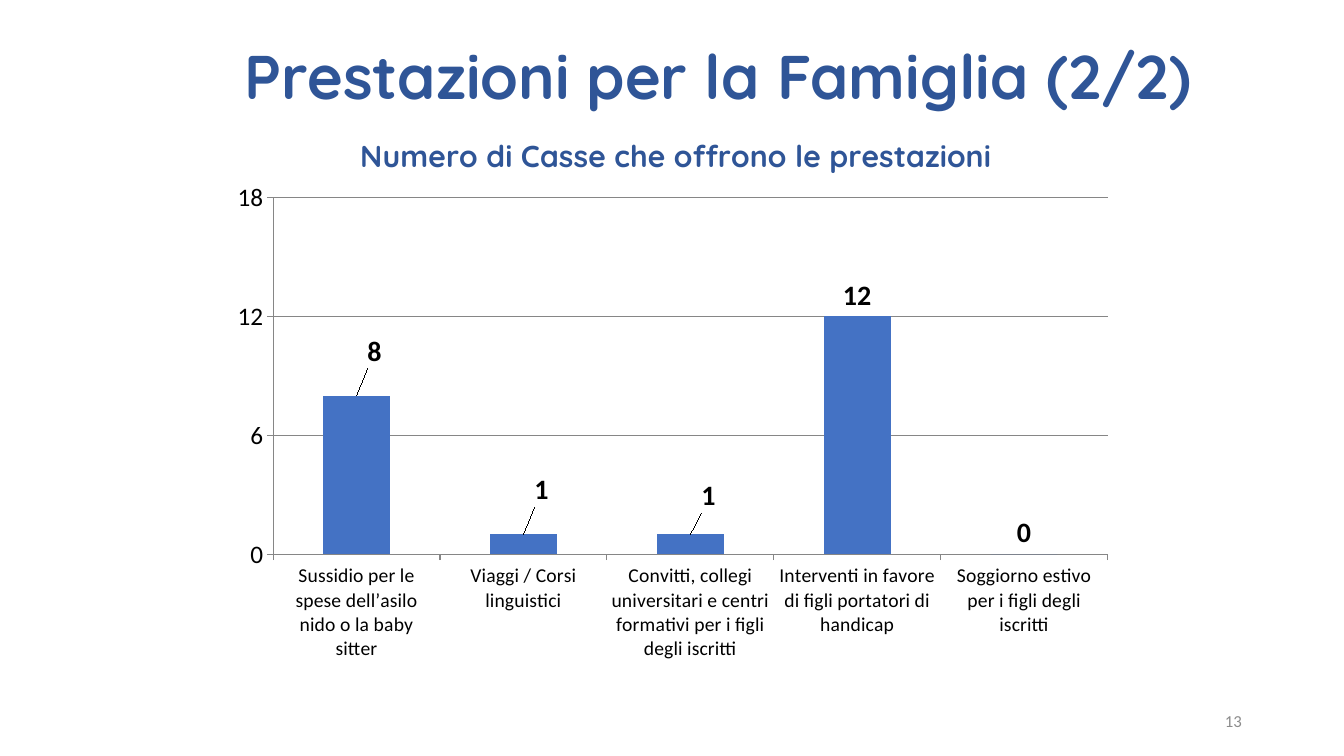
import pptx
import pptx.util
import pptx.dml.color
import pptx.chart.data
import pptx.enum.chart
import pptx.enum.text
import pptx.oxml
import pptx.oxml.ns

Cm, Pt = pptx.util.Cm, pptx.util.Pt
enum = pptx.enum.chart

theme = {
    "title": {"name": "Quicksand", "size": 44, "bold": True, "color": "2F5597"},
    "head": {"name": "Quicksand", "size": 21.6, "bold": True, "color": "2F5597"},
    "chart": {"name": "Calibri", "size": 18, "bold": False, "color": "000000"},
    "cats": {"name": "Calibri", "size": 14, "bold": False, "color": "000000"},
    "label": {"name": "Calibri", "size": 20, "bold": True, "color": "000000"},
    "page": {"name": "Calibri", "size": 12, "bold": False, "color": "8C8C8C"},
    "bar": "4472C4",
    "line": "868686",
}


def style(font, key):
    for name, value in theme[key].items():
        if name == "color":
            font.color.rgb = pptx.dml.color.RGBColor.from_string(value)
        else:
            setattr(font, name, Pt(value) if name == "size" else value)


def layout(**parts):
    body = "".join(f'<c:{tag} val="{val}"/>' for tag, val in parts.items())
    return pptx.oxml.parse_xml(
        f'<c:layout {pptx.oxml.ns.nsdecls("c")}><c:manualLayout>{body}'
        "</c:manualLayout></c:layout>")


deck = pptx.Presentation()
deck.slide_width, deck.slide_height = Cm(33.87), Cm(19.05)
slide = deck.slides.add_slide(deck.slide_layouts[6])

# Title and page number
anchor, align = pptx.enum.text.MSO_ANCHOR, pptx.enum.text.PP_ALIGN
texts = [
    ("Prestazioni per la Famiglia (2/2)", "title", (5.92, 1.04, 29.21, 3.68),
     anchor.TOP, {"alignment": align.LEFT, "line_spacing": 0.9}),
    ("13", "page", (23.93, 17.65, 7.62, 1.02),
     anchor.MIDDLE, {"alignment": align.RIGHT}),
]
for text, key, place, side, form in texts:
    frame = slide.shapes.add_textbox(*map(Cm, place)).text_frame
    frame.word_wrap = True
    frame.vertical_anchor = side
    para = frame.paragraphs[0]
    for name, value in form.items():
        setattr(para, name, value)
    run = para.add_run()
    run.text = text
    style(run.font, key)

# Chart data
head = "Numero di Casse che offrono le prestazioni"
data = pptx.chart.data.CategoryChartData()
data.categories = [
    "Sussidio per le spese dell’asilo nido o la baby sitter",
    "Viaggi / Corsi linguistici",
    "Convitti, collegi universitari e centri formativi per i figli degli iscritti",
    "Interventi in favore di figli portatori di handicap",
    "Soggiorno estivo per i figli degli iscritti",
]
data.add_series(head, [8, 1, 1, 12, 0])
chart = slide.shapes.add_chart(
    enum.XL_CHART_TYPE.COLUMN_CLUSTERED,
    Cm(5.51), Cm(2.51), Cm(22.86), Cm(14.5), data).chart
style(chart.font, "chart")
chart.has_legend = False

# Chart title and plot area
frame = chart.chart_title.text_frame
frame.text = head
style(frame.paragraphs[0].runs[0].font, "head")
chart.chart_title.include_in_layout = False
title = chart.chart_title._element
for old in title.findall(pptx.oxml.ns.qn("c:layout")):
    title.remove(old)
title.insert(1, layout(xMode="edge", yMode="edge", x=0.15, y=0.05))
area = chart._chartSpace.chart.plotArea
for old in area.findall(pptx.oxml.ns.qn("c:layout")):
    area.remove(old)
area.insert(0, layout(layoutTarget="inner", xMode="edge", yMode="edge",
                      x=0.06, y=0.17, w=0.92, h=0.62))

# Axes
cats, vals = chart.category_axis, chart.value_axis
for name, value in {"minimum_scale": 0, "maximum_scale": 18, "major_unit": 6,
                    "has_major_gridlines": True}.items():
    setattr(vals, name, value)
for axis, key in ((cats, "cats"), (vals, "chart")):
    axis.major_tick_mark = enum.XL_TICK_MARK.OUTSIDE
    style(axis.tick_labels.font, key)
for line in (cats.format.line, vals.format.line, vals.major_gridlines.format.line):
    line.width = Pt(0.75)
    line.color.rgb = pptx.dml.color.RGBColor.from_string(theme["line"])

# Bars and their labels
plot = chart.plots[0]
plot.gap_width = 150
plot.vary_by_categories = False
bars = plot.series[0]
bars.format.fill.solid()
bars.format.fill.fore_color.rgb = pptx.dml.color.RGBColor.from_string(theme["bar"])
labels = bars.data_labels
labels.show_value = True
labels.position = enum.XL_LABEL_POSITION.OUTSIDE_END
style(labels.font, "label")

# Shifted labels
shifts = [(0.02, -0.04), (0.02, -0.04), (0.02, -0.03)]
for index in range(len(shifts)):
    label = bars.points[index].data_label
    style(label.font, "label")
    label.position = enum.XL_LABEL_POSITION.OUTSIDE_END
for node, (x, y) in zip(bars._element.xpath(".//c:dLbl"), shifts):
    node.insert(1, layout(x=x, y=y))

deck.save("out.pptx")
